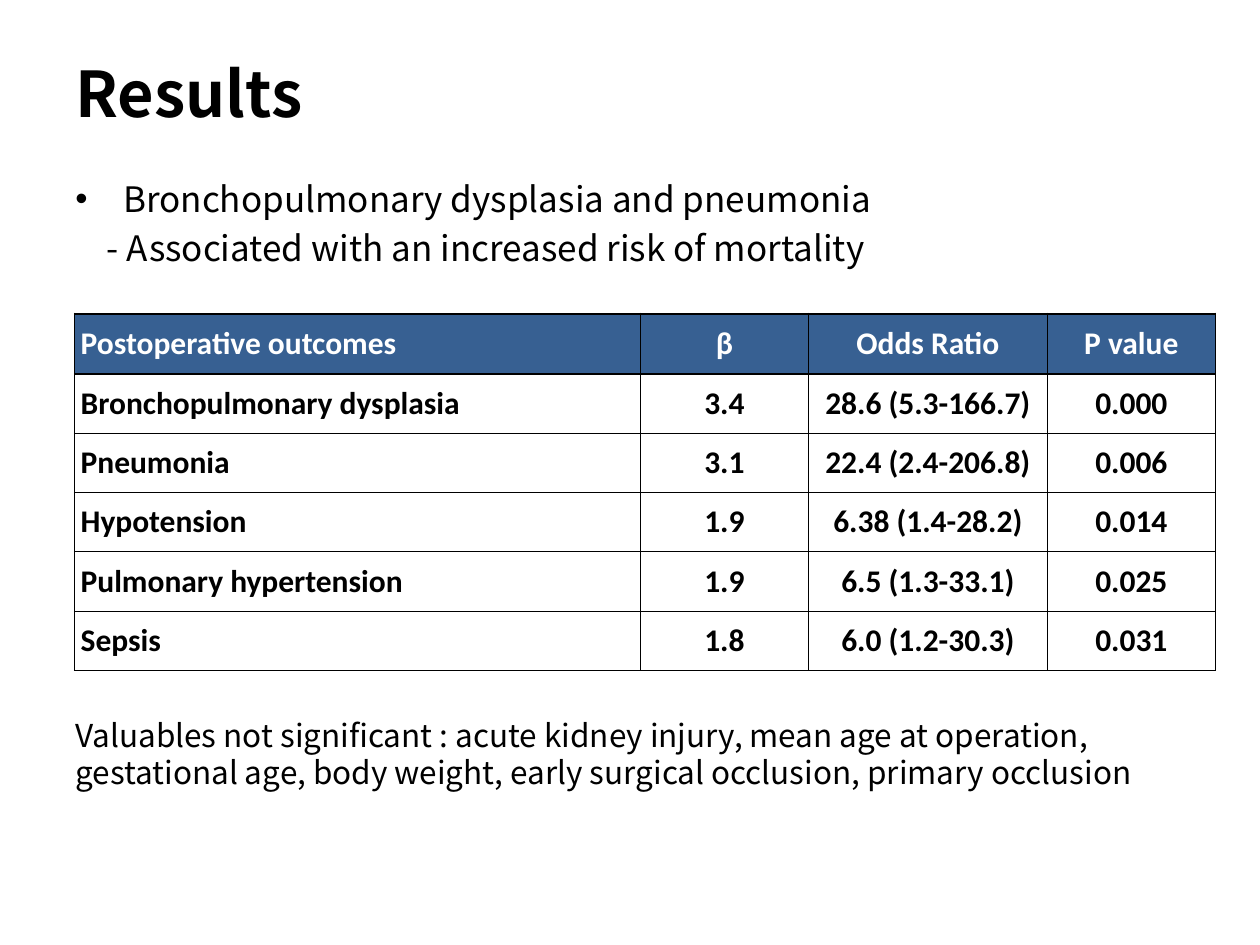
from dataclasses import dataclass

from lxml.etree import SubElement
from pptx import Presentation
from pptx.dml.color import RGBColor
from pptx.enum.text import MSO_ANCHOR, PP_ALIGN
from pptx.oxml import parse_xml
from pptx.oxml.ns import nsdecls, qn
from pptx.util import Inches, Pt


@dataclass(frozen=True)
class Theme:
    black: str = "000000"
    white: str = "FFFFFF"
    header: str = "376092"
    text_font: str = "Noto Sans CJK KR"
    table_font: str = "Calibri"
    title_size: int = 36
    point_size: int = 20
    body_size: int = 18
    thin: float = 0.6
    thick: float = 1.6


THEME = Theme()

OUTCOMES = [
    ("Postoperative outcomes", "β", "Odds Ratio", "P value"),
    ("Bronchopulmonary dysplasia", "3.4", "28.6 (5.3-166.7)", "0.000"),
    ("Pneumonia", "3.1", "22.4 (2.4-206.8)", "0.006"),
    ("Hypotension", "1.9", "6.38 (1.4-28.2)", "0.014"),
    ("Pulmonary hypertension", "1.9", "6.5 (1.3-33.1)", "0.025"),
    ("Sepsis", "1.8", "6.0 (1.2-30.3)", "0.031"),
]
COLUMN_WIDTHS = (4.49, 1.34, 1.89, 1.34)
HEADER_HEIGHT = 0.48
ROW_HEIGHT = 0.47


def write(para, text, size=THEME.body_size, font=THEME.text_font,
          color=THEME.black, bold=False, align=PP_ALIGN.LEFT,
          before=0, margin=0, bullet=None):
    para.alignment = align
    para.space_before = Pt(before)
    properties = para._p.get_or_add_pPr()
    properties.set("marL", str(Inches(margin)))
    properties.set("indent", str(-Inches(margin) if bullet else 0))
    if bullet:
        SubElement(properties, qn("a:buFont")).set("typeface", "Arial")
        SubElement(properties, qn("a:buChar")).set("char", bullet)
    span = para.add_run()
    span.text = text
    span.font.name = font
    span.font.size = Pt(size)
    span.font.bold = bold
    span.font.color.rgb = RGBColor.from_string(color)


def add_frame(page, left, top, width, height, anchor=MSO_ANCHOR.TOP):
    box = page.shapes.add_textbox(
        Inches(left), Inches(top), Inches(width), Inches(height))
    frame = box.text_frame
    frame.word_wrap = True
    frame.vertical_anchor = anchor
    return frame


def add_title(page, left, top, width, height):
    frame = add_frame(page, left, top, width, height, MSO_ANCHOR.MIDDLE)
    write(frame.paragraphs[0], "Results", size=THEME.title_size, bold=True)


def add_finding(page, left, top, width, height):
    frame = add_frame(page, left, top, width, height)
    write(frame.paragraphs[0], "Bronchopulmonary dysplasia and pneumonia",
          size=THEME.point_size, margin=0.38, bullet="•")
    write(frame.add_paragraph(),
          "- Associated with an increased risk of mortality",
          size=THEME.point_size, before=4, margin=0.25)


def set_borders(cell, top, bottom):
    properties = cell._tc.get_or_add_tcPr()
    sides = (("L", THEME.thin), ("R", THEME.thin), ("T", top), ("B", bottom))
    for position, (side, weight) in enumerate(sides):
        properties.insert(position, parse_xml(
            f'<a:ln{side} {nsdecls("a")} w="{Pt(weight)}"><a:solidFill>'
            f'<a:srgbClr val="{THEME.black}"/></a:solidFill></a:ln{side}>'))


def fill_cell(cell, text, row, column):
    is_header = row == 0
    cell.vertical_anchor = MSO_ANCHOR.MIDDLE
    cell.margin_left = cell.margin_right = Inches(0.05)
    cell.margin_top = cell.margin_bottom = Inches(0.03)
    cell.fill.solid()
    cell.fill.fore_color.rgb = RGBColor.from_string(
        THEME.header if is_header else THEME.white)
    set_borders(cell, THEME.thick if row <= 1 else THEME.thin,
                THEME.thick if is_header else THEME.thin)
    write(cell.text_frame.paragraphs[0], text, font=THEME.table_font,
          color=THEME.white if is_header else THEME.black, bold=True,
          align=PP_ALIGN.CENTER if column else PP_ALIGN.LEFT)


def add_outcome_table(page, left, top):
    height = HEADER_HEIGHT + ROW_HEIGHT * (len(OUTCOMES) - 1)
    table = page.shapes.add_table(
        len(OUTCOMES), len(COLUMN_WIDTHS), Inches(left), Inches(top),
        Inches(sum(COLUMN_WIDTHS)), Inches(height)).table
    for column, width in zip(table.columns, COLUMN_WIDTHS):
        column.width = Inches(width)
    for row, values in enumerate(OUTCOMES):
        table.rows[row].height = Inches(ROW_HEIGHT if row else HEADER_HEIGHT)
        for column, text in enumerate(values):
            fill_cell(table.cell(row, column), text, row, column)


def add_footnote(page, left, top, width, height):
    frame = add_frame(page, left, top, width, height)
    write(frame.paragraphs[0],
          "Valuables not significant : acute kidney injury, mean age at "
          "operation, gestational age, body weight, early surgical occlusion, "
          "primary occlusion")


def main():
    deck = Presentation()
    deck.slide_width = Inches(10)
    deck.slide_height = Inches(7.5)
    page = deck.slides.add_slide(deck.slide_layouts[6])
    add_title(page, 0.5, 0.24, 4.5, 0.99)
    add_finding(page, 0.5, 1.36, 9, 1.13)
    add_outcome_table(page, 0.59, 2.49)
    add_footnote(page, 0.5, 5.63, 9.26, 0.71)
    deck.save("out.pptx")


if __name__ == "__main__":
    main()
